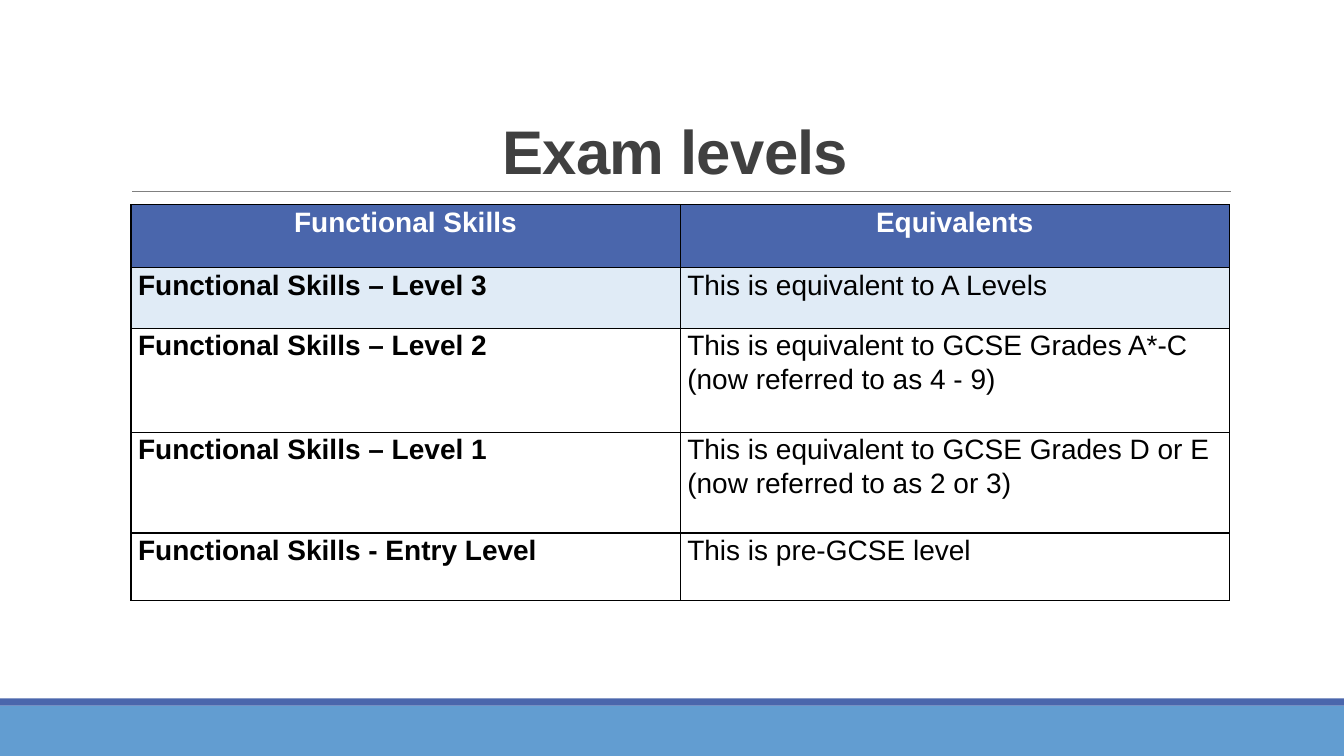
"""Build the slide that compares Functional Skills levels with their equivalents."""
from dataclasses import dataclass

from lxml.etree import SubElement
from pptx import Presentation
from pptx.dml.color import RGBColor
from pptx.enum.shapes import MSO_CONNECTOR, MSO_SHAPE
from pptx.enum.text import MSO_ANCHOR, MSO_AUTO_SIZE, PP_ALIGN
from pptx.oxml.ns import qn
from pptx.util import Cm, Pt


@dataclass(frozen=True)
class Theme:
    """Hold the colours, font and sizes of the slide."""
    font: str = "Arial"
    title_size: float = 44
    table_size: float = 20
    title: str = "404040"
    ink: str = "000000"
    paper: str = "FFFFFF"
    navy: str = "4A66AC"
    sky: str = "629DD1"
    tint: str = "E0EBF6"
    rule: str = "808080"


THEME = Theme()
HEADINGS = ("Functional Skills", "Equivalents")
LEVELS = (
    ("Functional Skills – Level 3", "This is equivalent to A Levels"),
    ("Functional Skills – Level 2",
     "This is equivalent to GCSE Grades A*-C (now referred to as 4 - 9)"),
    ("Functional Skills – Level 1",
     "This is equivalent to GCSE Grades D or E (now referred to as 2 or 3)"),
    ("Functional Skills - Entry Level", "This is pre-GCSE level"),
)
ROW_HEIGHTS = (1.59, 1.52, 2.62, 2.54, 1.7)
COLUMN_WIDTH = 13.84


def write_text(frame, text, *, size, color, bold=False, align=PP_ALIGN.LEFT,
               line_spacing=1.0, tracking=None):
    """Write one formatted paragraph into a text frame."""
    frame.word_wrap = True
    paragraph = frame.paragraphs[0]
    paragraph.alignment = align
    paragraph.line_spacing = line_spacing
    run = paragraph.add_run()
    run.text = text
    run.font.name = THEME.font
    run.font.size = Pt(size)
    run.font.bold = bold
    run.font.color.rgb = RGBColor.from_string(color)
    if tracking is not None:
        run.font._element.set("spc", str(round(tracking * 100)))


def add_band(slide, top, height, color):
    """Add a full-width footer band."""
    band = slide.shapes.add_shape(
        MSO_SHAPE.RECTANGLE, 0, Cm(top), Cm(33.87), Cm(height))
    band.shadow.inherit = False
    band.fill.solid()
    band.fill.fore_color.rgb = RGBColor.from_string(color)
    band.line.fill.background()


def add_rule(slide, left, right, top):
    """Add the thin rule under the title."""
    rule = slide.shapes.add_connector(
        MSO_CONNECTOR.STRAIGHT, Cm(left), Cm(top), Cm(right), Cm(top))
    rule.line.color.rgb = RGBColor.from_string(THEME.rule)
    rule.line.width = Pt(0.5)
    SubElement(rule._element.spPr, qn("a:effectLst"))


def place_title(slide, text):
    """Move the title placeholder into place and fill it."""
    title = slide.shapes.title
    title.left, title.top = Cm(3.05), Cm(0.79)
    title.width, title.height = Cm(27.94), Cm(4.04)
    title.text_frame.auto_size = MSO_AUTO_SIZE.NONE
    title.text_frame.vertical_anchor = MSO_ANCHOR.BOTTOM
    write_text(title.text_frame, text, size=THEME.title_size, color=THEME.title,
               bold=True, align=PP_ALIGN.CENTER, line_spacing=0.85, tracking=-0.5)


def outline_cell(cell):
    """Draw a thin border on all four sides of a cell."""
    properties = cell._tc.get_or_add_tcPr()
    for side in ("lnL", "lnR", "lnT", "lnB"):
        border = SubElement(properties, qn(f"a:{side}"), w=str(Pt(1)))
        fill = SubElement(border, qn("a:solidFill"))
        SubElement(fill, qn("a:srgbClr"), val=THEME.ink)


def format_cell(cell, text, fill, **text_format):
    """Set the border, fill, margins and text of a cell."""
    outline_cell(cell)
    cell.fill.solid()
    cell.fill.fore_color.rgb = RGBColor.from_string(fill)
    cell.margin_left = cell.margin_right = Cm(0.18)
    cell.margin_top = cell.margin_bottom = 0
    cell.vertical_anchor = MSO_ANCHOR.TOP
    write_text(cell.text_frame, text, size=THEME.table_size,
               line_spacing=1.07, **text_format)


def add_levels_table(slide):
    """Add the table of levels and their equivalents."""
    levels = slide.shapes.add_table(
        len(ROW_HEIGHTS), len(HEADINGS), Cm(3.3), Cm(5.16),
        Cm(COLUMN_WIDTH * len(HEADINGS)), Cm(sum(ROW_HEIGHTS))).table
    levels.horz_banding = False
    for column in levels.columns:
        column.width = Cm(COLUMN_WIDTH)
    for row, height in zip(levels.rows, ROW_HEIGHTS):
        row.height = Cm(height)
    for column, heading in enumerate(HEADINGS):
        format_cell(levels.cell(0, column), heading, THEME.navy,
                    color=THEME.paper, bold=True, align=PP_ALIGN.CENTER)
    for row, entries in enumerate(LEVELS, start=1):
        fill = THEME.tint if row == 1 else THEME.paper
        for column, entry in enumerate(entries):
            format_cell(levels.cell(row, column), entry, fill,
                        color=THEME.ink, bold=column == 0)


def main():
    """Assemble and save the slide."""
    deck = Presentation()
    deck.slide_width, deck.slide_height = Cm(33.87), Cm(19.05)
    slide = deck.slides.add_slide(deck.slide_layouts.get_by_name("Title Only"))
    add_band(slide, 17.78, 1.27, THEME.sky)
    add_band(slide, 17.6, 0.18, THEME.navy)
    add_rule(slide, 3.33, 31.01, 4.83)
    place_title(slide, "Exam levels")
    add_levels_table(slide)
    deck.save("out.pptx")


if __name__ == "__main__":
    main()
